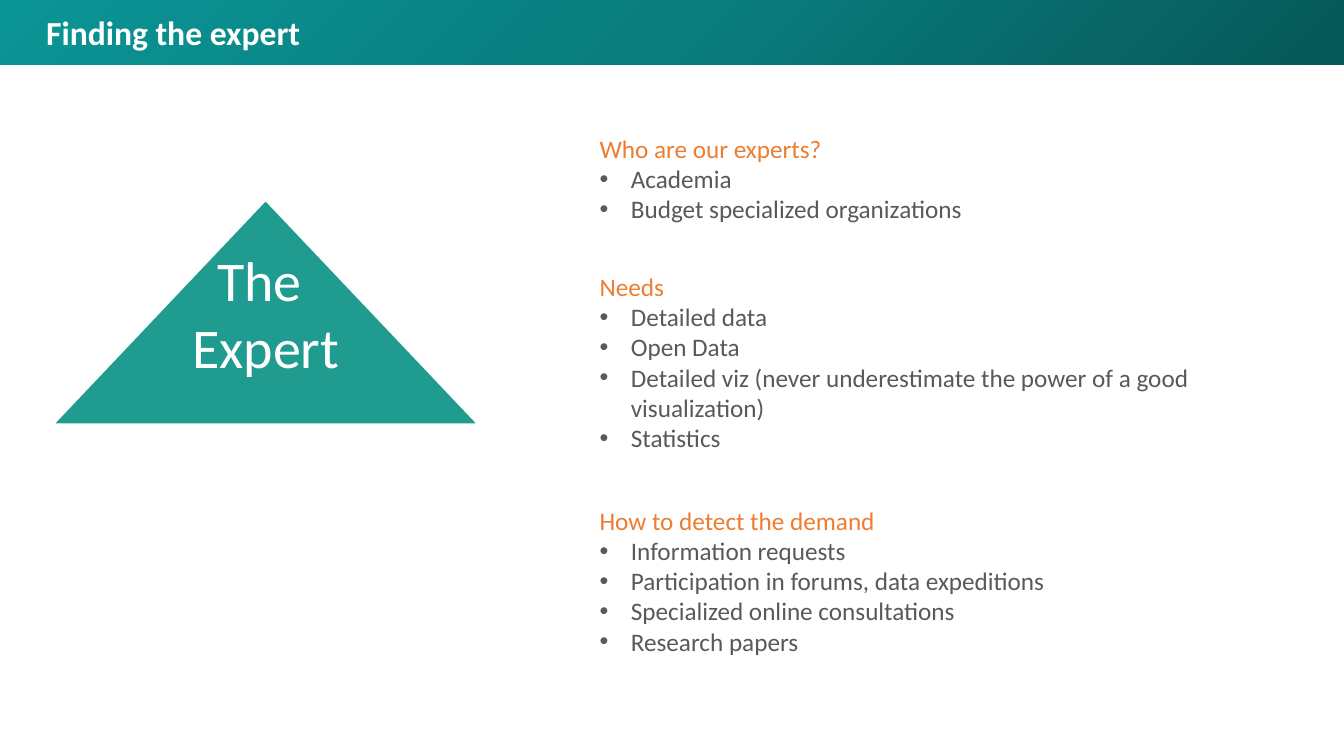
from dataclasses import dataclass

from lxml.etree import SubElement
from pptx import Presentation
from pptx.dml.color import RGBColor
from pptx.enum.shapes import MSO_SHAPE as Shape
from pptx.enum.text import MSO_ANCHOR as Anchor, MSO_AUTO_SIZE as AutoSize, PP_ALIGN as Align
from pptx.oxml import parse_xml
from pptx.oxml.ns import nsdecls, qn
from pptx.util import Cm, Pt


@dataclass(frozen=True)
class Theme:
    font: str = "Calibri"
    white: str = "FFFFFF"
    heading: str = "ED7D31"
    body: str = "595959"
    triangle: str = "1F9C8F"
    banner: tuple = ((0, "075858"), (50, "097D7E"), (100, "0B9495"))
    title_size: int = 24
    label_size: int = 40
    body_size: int = 18


def write(paragraph, text, *, theme, color, size, bold=False, align=Align.LEFT, bullet=False):
    paragraph.alignment = align
    if bullet:
        properties = paragraph._p.get_or_add_pPr()
        indent = Cm(0.79)
        properties.set("marL", str(indent))
        properties.set("indent", str(-indent))
        SubElement(properties, qn("a:buFont"), typeface="Arial")
        SubElement(properties, qn("a:buChar"), char="•")
    run = paragraph.add_run()
    run.text = text
    font = run.font
    font.name, font.size, font.bold = theme.font, Pt(size), bold
    font.color.rgb = RGBColor.from_string(color)


class SlideBuilder:
    def __init__(self, deck, theme):
        self.theme = theme
        self.slide = deck.slides.add_slide(deck.slide_layouts[5])
        self.shapes = self.slide.shapes

    def banner(self, width, height):
        """Draw the gradient band behind the title."""
        band = self.shapes.add_shape(Shape.RECTANGLE, 0, 0, width, height)
        band.shadow.inherit = False
        band.line.fill.background()
        stops = "".join(
            f'<a:gs pos="{position * 1000}"><a:srgbClr val="{color}"/></a:gs>'
            for position, color in self.theme.banner
        )
        gradient = parse_xml(
            f'<a:gradFill {nsdecls("a")} rotWithShape="1"><a:gsLst>{stops}</a:gsLst>'
            '<a:path path="circle"><a:fillToRect l="100000" t="100000"/></a:path></a:gradFill>'
        )
        band._element.spPr.find(qn("a:prstGeom")).addnext(gradient)
        self.shapes._spTree.insert(2, band._element)

    def title(self, text, left, top, width, height):
        title = self.shapes.title
        title.left, title.top, title.width, title.height = left, top, width, height
        frame = title.text_frame
        frame.auto_size = AutoSize.NONE
        frame.vertical_anchor = Anchor.TOP
        write(frame.paragraphs[0], text, theme=self.theme, color=self.theme.white,
              size=self.theme.title_size, bold=True)

    def text_box(self, left, top, width, height, lines, anchor=Anchor.TOP, inset=None):
        """Add a box of lines, each a pair of text and format."""
        frame = self.shapes.add_textbox(left, top, width, height).text_frame
        frame.word_wrap = True
        frame.vertical_anchor = anchor
        if inset is not None:
            frame.margin_left = frame.margin_right = inset
            frame.margin_top = frame.margin_bottom = inset
        for index, (text, style) in enumerate(lines):
            paragraph = frame.add_paragraph() if index else frame.paragraphs[0]
            write(paragraph, text, theme=self.theme, **style)

    def triangle(self, left, top, width, height, lines):
        theme = self.theme
        triangle = self.shapes.add_shape(Shape.TRAPEZOID, left, top, width, height)
        triangle.adjustments[0] = width / 2 / height
        triangle.shadow.inherit = False
        triangle.fill.solid()
        triangle.fill.fore_color.rgb = RGBColor.from_string(theme.triangle)
        triangle.line.color.rgb = RGBColor.from_string(theme.white)
        triangle.line.width = Pt(1)
        style = dict(color=theme.white, size=theme.label_size, align=Align.CENTER)
        self.text_box(left, top, width, height, [(line, style) for line in lines],
                      anchor=Anchor.MIDDLE, inset=Cm(0.15))

    def topic(self, left, top, width, height, heading, points):
        theme = self.theme
        point_style = dict(color=theme.body, size=theme.body_size, bullet=True)
        lines = [(heading, dict(color=theme.heading, size=theme.body_size))]
        lines += [(point, point_style) for point in points]
        self.text_box(left, top, width, height, lines)


TOPICS = (
    (3.23, 11.86, 2.57, "Who are our experts?",
     ("Academia", "Budget specialized organizations")),
    (6.71, 17.02, 6.4, "Needs",
     ("Detailed data", "Open Data",
      "Detailed viz (never underestimate the power of a good visualization)", "Statistics")),
    (12.6, 17.02, 4.88, "How to detect the demand",
     ("Information requests", "Participation in forums, data expeditions",
      "Specialized online consultations", "Research papers")),
)


def main():
    deck = Presentation()
    deck.slide_width, deck.slide_height = Cm(33.87), Cm(19.05)
    builder = SlideBuilder(deck, Theme())
    builder.banner(deck.slide_width, Cm(1.63))
    builder.title("Finding the expert", Cm(0.91), Cm(0.18), Cm(31.19), Cm(1.27))
    builder.triangle(Cm(1.35), Cm(5.05), Cm(10.69), Cm(5.64), ("The ", "Expert"))
    for top, width, height, heading, points in TOPICS:
        builder.topic(Cm(14.86), Cm(top), Cm(width), Cm(height), heading, points)
    deck.save("out.pptx")


if __name__ == "__main__":
    main()
